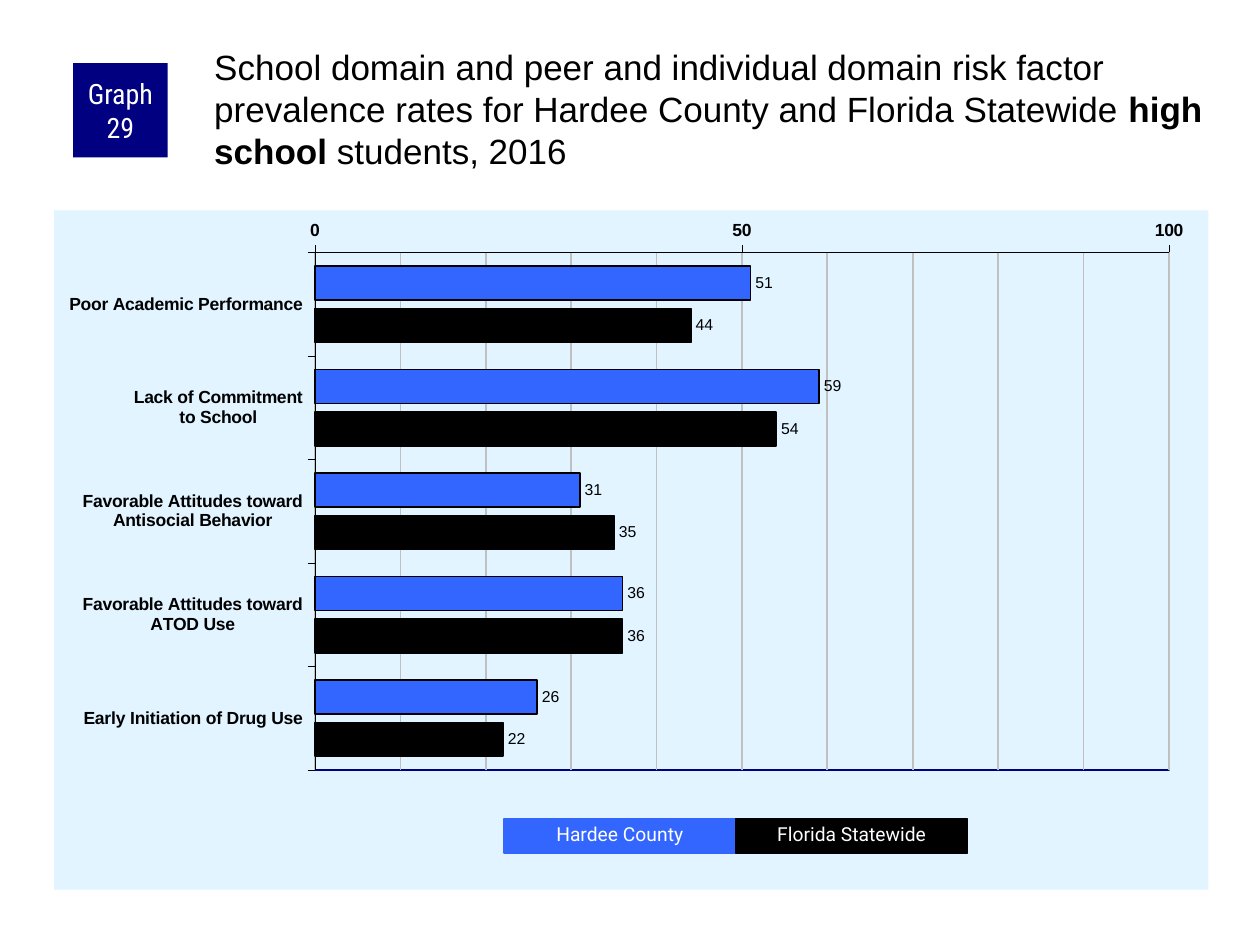
from lxml.etree import fromstring
from pptx import Presentation
from pptx.chart.data import CategoryChartData
from pptx.dml.color import RGBColor
from pptx.enum.chart import (XL_AXIS_CROSSES, XL_CHART_TYPE, XL_LABEL_POSITION,
                             XL_TICK_MARK)
from pptx.enum.shapes import MSO_SHAPE
from pptx.enum.text import MSO_ANCHOR, MSO_AUTO_SIZE, PP_ALIGN
from pptx.util import Inches, Pt

TITLE = [
    ("School domain and peer and individual domain risk factor prevalence "
     "rates for Hardee County and Florida Statewide ", False),
    ("high school", True),
    (" students, 2016", False),
]
BADGE = "Graph 29"
RISK_FACTORS = [
    "Poor Academic Performance",
    "Lack of Commitment\nto School",
    "Favorable Attitudes toward\nAntisocial Behavior",
    "Favorable Attitudes toward\nATOD Use",
    "Early Initiation of Drug Use",
]
REGIONS = [
    ("Hardee County", "3366FF", (51, 59, 31, 36, 26)),
    ("Florida Statewide", "000000", (44, 54, 35, 36, 22)),
]
THEME = {
    "font": "Arial", "badge_font": "Roboto Condensed", "key_font": "Roboto",
    "text": "000000", "light_text": "FFFFFF", "navy": "000080",
    "panel": "E1F4FF", "grid": "C0C0C0",
    "title_size": 20, "badge_size": 16, "key_size": 11,
    "axis_size": 10, "value_size": 9,
}
KEY_LEFT, KEY_TOP, KEY_WIDTH, KEY_HEIGHT = 4, 6.5, 1.84, 0.27
PLOT_LAYOUT = {"x": 0.226, "y": 0.062, "w": 0.74, "h": 0.762}
NAMESPACES = ('xmlns:c="http://schemas.openxmlformats.org/drawingml/2006/chart" '
              'xmlns:a="http://schemas.openxmlformats.org/drawingml/2006/main"')


def rgb(color):
    return RGBColor.from_string(color)


def style_font(font, name, size, color, bold=False):
    font.name, font.size, font.bold = name, Pt(size), bold
    font.color.rgb = rgb(color)


def style_line(line, color, width):
    line.color.rgb = rgb(color)
    line.width = Pt(width)


def set_margins(frame, left, top, right, bottom):
    frame.margin_left, frame.margin_top = Inches(left), Inches(top)
    frame.margin_right, frame.margin_bottom = Inches(right), Inches(bottom)


def add_title(slide):
    title = slide.shapes.title
    title.left, title.top = Inches(1.67), Inches(0.33)
    title.width, title.height = Inches(7.92), Inches(0.83)
    frame = title.text_frame
    frame.word_wrap = True
    frame.auto_size = MSO_AUTO_SIZE.NONE
    frame.vertical_anchor = MSO_ANCHOR.TOP
    set_margins(frame, 0.03, 0.03, 0, 0)
    paragraph = frame.paragraphs[0]
    paragraph.alignment = PP_ALIGN.LEFT
    for words, bold in TITLE:
        run = paragraph.add_run()
        run.text = words
        style_font(run.font, THEME["font"], THEME["title_size"], THEME["text"], bold)


def add_label_box(slide, label, fill, place, font, size):
    box = slide.shapes.add_shape(MSO_SHAPE.RECTANGLE, *map(Inches, place))
    box.shadow.inherit = False
    box.fill.solid()
    box.fill.fore_color.rgb = rgb(fill)
    box.line.fill.background()
    box.text_frame.text = label
    box.text_frame.word_wrap = True
    paragraph = box.text_frame.paragraphs[0]
    paragraph.alignment = PP_ALIGN.CENTER
    style_font(paragraph.runs[0].font, font, size, THEME["light_text"])
    return box


def add_badge(slide):
    badge = add_label_box(slide, BADGE, THEME["navy"], (0.58, 0.5, 0.75, 0.75),
                          THEME["badge_font"], THEME["badge_size"])
    badge.text_frame.vertical_anchor = MSO_ANCHOR.MIDDLE
    set_margins(badge.text_frame, 0.05, 0, 0.05, 0)


def add_key(slide):
    for i, (region, color, _) in enumerate(REGIONS):
        place = (KEY_LEFT + i * KEY_WIDTH, KEY_TOP, KEY_WIDTH, KEY_HEIGHT)
        key = add_label_box(slide, region, color, place,
                            THEME["key_font"], THEME["key_size"])
        style_line(key.line, color, 0.75)
        key.text_frame.vertical_anchor = MSO_ANCHOR.TOP
        key.text_frame.auto_size = MSO_AUTO_SIZE.SHAPE_TO_FIT_TEXT
        key.text_frame.paragraphs[0].line_spacing = 0.9


def style_axes(chart):
    categories, values = chart.category_axis, chart.value_axis
    for axis in (categories, values):
        axis.major_tick_mark = XL_TICK_MARK.OUTSIDE
        axis.minor_tick_mark = XL_TICK_MARK.NONE
        style_font(axis.tick_labels.font, THEME["font"], THEME["axis_size"],
                   THEME["text"], True)
        style_line(axis.format.line, THEME["text"], 0.25)
    categories.reverse_order = True
    categories.crosses = XL_AXIS_CROSSES.MAXIMUM
    values.minimum_scale, values.maximum_scale = 0, 100
    values.major_unit, values.minor_unit = 50, 10
    values.has_major_gridlines = values.has_minor_gridlines = True
    style_line(values.major_gridlines.format.line, THEME["grid"], 1)
    # Minor gridlines have no formatting object in python-pptx.
    minor = chart._chartSpace.xpath(".//c:valAx/c:minorGridlines")[0]
    minor.append(fromstring(
        f'<c:spPr {NAMESPACES}><a:ln w="{Pt(1)}"><a:solidFill>'
        f'<a:srgbClr val="{THEME["grid"]}"/></a:solidFill></a:ln></c:spPr>'))


def style_areas(chart):
    """Fill the chart panel, frame the plot and fix the plot's inner position."""
    space = chart._chartSpace
    space.xpath("c:chart")[0].addnext(fromstring(
        f'<c:spPr {NAMESPACES}><a:solidFill><a:srgbClr val="{THEME["panel"]}"/>'
        '</a:solidFill><a:ln><a:noFill/></a:ln></c:spPr>'))
    plot_area = space.xpath("c:chart/c:plotArea")[0]
    for layout in plot_area.xpath("c:layout"):
        plot_area.remove(layout)
    modes = "".join(f'<c:{side}Mode val="edge"/>' for side in "xy")
    extents = "".join(f'<c:{key} val="{share}"/>' for key, share in PLOT_LAYOUT.items())
    plot_area.insert(0, fromstring(
        f'<c:layout {NAMESPACES}><c:manualLayout><c:layoutTarget val="inner"/>'
        f'{modes}{extents}</c:manualLayout></c:layout>'))
    plot_area.append(fromstring(
        f'<c:spPr {NAMESPACES}><a:noFill/><a:ln w="{Pt(1)}"><a:solidFill>'
        f'<a:srgbClr val="{THEME["navy"]}"/></a:solidFill></a:ln></c:spPr>'))


def add_risk_chart(slide):
    rates = CategoryChartData()
    rates.categories = RISK_FACTORS
    for region, _, prevalence in REGIONS:
        rates.add_series(region, prevalence)
    chart = slide.shapes.add_chart(
        XL_CHART_TYPE.BAR_CLUSTERED, Inches(0.43), Inches(1.67),
        Inches(9.16), Inches(5.39), rates).chart
    chart.has_legend = chart.has_title = False
    style_font(chart.font, THEME["font"], THEME["axis_size"], THEME["text"])
    plot = chart.plots[0]
    plot.gap_width, plot.overlap, plot.vary_by_categories = 80, -25, False
    for series, (_, color, _) in zip(plot.series, REGIONS):
        series.format.fill.solid()
        series.format.fill.fore_color.rgb = rgb(color)
        style_line(series.format.line, THEME["text"], 1)
        labels = series.data_labels
        labels.show_value = True
        labels.position = XL_LABEL_POSITION.OUTSIDE_END
        style_font(labels.font, THEME["font"], THEME["value_size"], THEME["text"])
    style_axes(chart)
    style_areas(chart)


def main():
    deck = Presentation()
    deck.slide_width, deck.slide_height = Inches(10), Inches(7.5)
    slide = deck.slides.add_slide(deck.slide_layouts.get_by_name("Title Only"))
    add_risk_chart(slide)
    add_badge(slide)
    add_title(slide)
    add_key(slide)
    deck.save("out.pptx")


if __name__ == "__main__":
    main()
